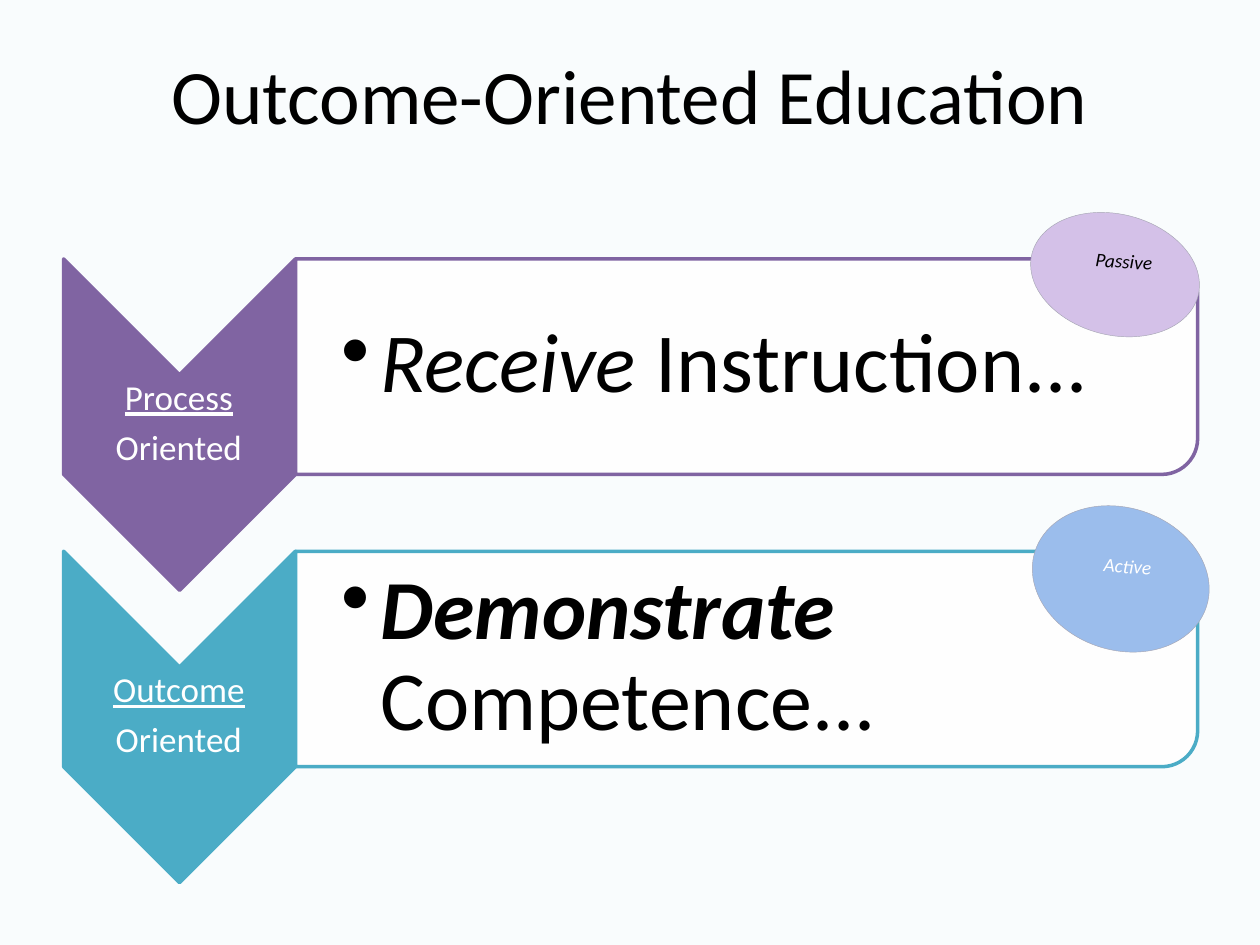
from lxml import etree
from pptx import Presentation
from pptx.dml.color import RGBColor
from pptx.enum.shapes import MSO_SHAPE as SHAPE
from pptx.enum.text import MSO_ANCHOR as ANCHOR, PP_ALIGN as ALIGN
from pptx.oxml.ns import qn
from pptx.util import Inches, Pt

COLORS = {
    "background": "F9FCFD", "black": "000000", "white": "FFFFFF",
    "purple": "8064A2", "teal": "4BACC6",
    "lilac": "D4C1E8", "sky": "9BBDEC", "edge": "A6A6B4",
}


def add_block(kind, box, fill, line, line_width, rotation):
    block = slide.shapes.add_shape(kind, *map(Inches, box))
    block.rotation = rotation
    block.shadow.inherit = False
    block.fill.solid()
    block.fill.fore_color.rgb = RGBColor.from_string(COLORS[fill])
    block.line.color.rgb = RGBColor.from_string(COLORS[line])
    block.line.width = Pt(line_width)
    return block


def add_text(box, insets, paragraphs, size, color, align=ALIGN.CENTER,
             anchor=ANCHOR.MIDDLE, line_spacing=1.0, space_after=0):
    """Each paragraph is a list of (text, styles); styles holds letters from b, i, u."""
    text_box = slide.shapes.add_textbox(*map(Inches, box))
    frame = text_box.text_frame
    frame.word_wrap = True
    frame.vertical_anchor = anchor
    (frame.margin_left, frame.margin_top,
     frame.margin_right, frame.margin_bottom) = map(Inches, insets)
    for index, runs in enumerate(paragraphs):
        paragraph = frame.add_paragraph() if index else frame.paragraphs[0]
        paragraph.alignment = align
        paragraph.line_spacing = line_spacing
        paragraph.space_after = Pt(space_after)
        for text, styles in runs:
            run = paragraph.add_run()
            run.text = text
            run.font.name = "Calibri"
            run.font.size = Pt(size)
            run.font.color.rgb = RGBColor.from_string(COLORS[color])
            run.font.bold = "b" in styles
            run.font.italic = "i" in styles
            run.font.underline = "u" in styles
    return text_box


prs = Presentation()
prs.slide_width, prs.slide_height = Inches(10), Inches(7.5)
slide = prs.slides.add_slide(prs.slide_layouts[6])
slide.background.fill.solid()
slide.background.fill.fore_color.rgb = RGBColor.from_string(COLORS["background"])

# Title
add_text((0.5, 0.3, 9, 1.25), (0.1, 0.08, 0.1, 0.05),
         [[("Outcome-Oriented Education", "")]], 44, "black", anchor=ANCHOR.TOP)

# Rows: chevron label on the left, statement panel on the right
row_pitch = 2.32
rows = [
    ("Process", "purple", [("Receive", "i"), (" Instruction...", "")]),
    ("Outcome", "teal", [("Demonstrate", "bi"), (" Competence...", "")]),
]
for index, (focus, accent, statement) in enumerate(rows):
    drop = index * row_pitch

    add_block(SHAPE.CHEVRON, (0.11, 2.45 + drop, 2.63, 1.84), accent, accent, 2, 90)
    add_text((0.5, 2.97 + drop, 1.84, 0.79), (0.01,) * 4,
             [[(focus, "u")], [("Oriented", "")]], 20, "white",
             line_spacing=0.9, space_after=7)

    panel = add_block(SHAPE.ROUND_2_SAME_RECTANGLE, (5.07, -0.67 + drop, 1.71, 7.16),
                      "white", accent, 2, 90)
    panel_color = panel.fill._xPr.find(qn("a:solidFill"))[0]
    etree.SubElement(panel_color, qn("a:alpha"), val="90000")

    statement_box = add_text((2.34, 2.13 + drop, 7.08, 1.54), (0.37, 0.03, 0.03, 0.03),
                             [statement], 48, "black", align=ALIGN.LEFT,
                             line_spacing=0.9, space_after=7.2)
    properties = statement_box.text_frame.paragraphs[0]._p.get_or_add_pPr()
    properties.set("lvl", "1")
    properties.set("marL", str(Inches(0.31)))
    properties.set("indent", str(Inches(-0.31)))
    etree.SubElement(properties, qn("a:buChar"), char="•")

# Tilted ovals, each with its caption
ovals = [
    ("Passive", "lilac", "black", (8.17, 1.7, 1.36, 0.96), 14, (8.42, 1.92, 1, 0.3)),
    ("Active", "sky", "white", (8.18, 4.03, 1.43, 1.13), 18, (8.45, 4.34, 1, 0.3)),
]
for caption, fill, text_color, oval_box, tilt, caption_box in ovals:
    add_block(SHAPE.OVAL, oval_box, fill, "edge", 0.25, tilt)
    caption_text = add_text(caption_box, (0,) * 4, [[(caption, "i")]], 11, text_color)
    caption_text.rotation = 4

prs.save("out.pptx")
